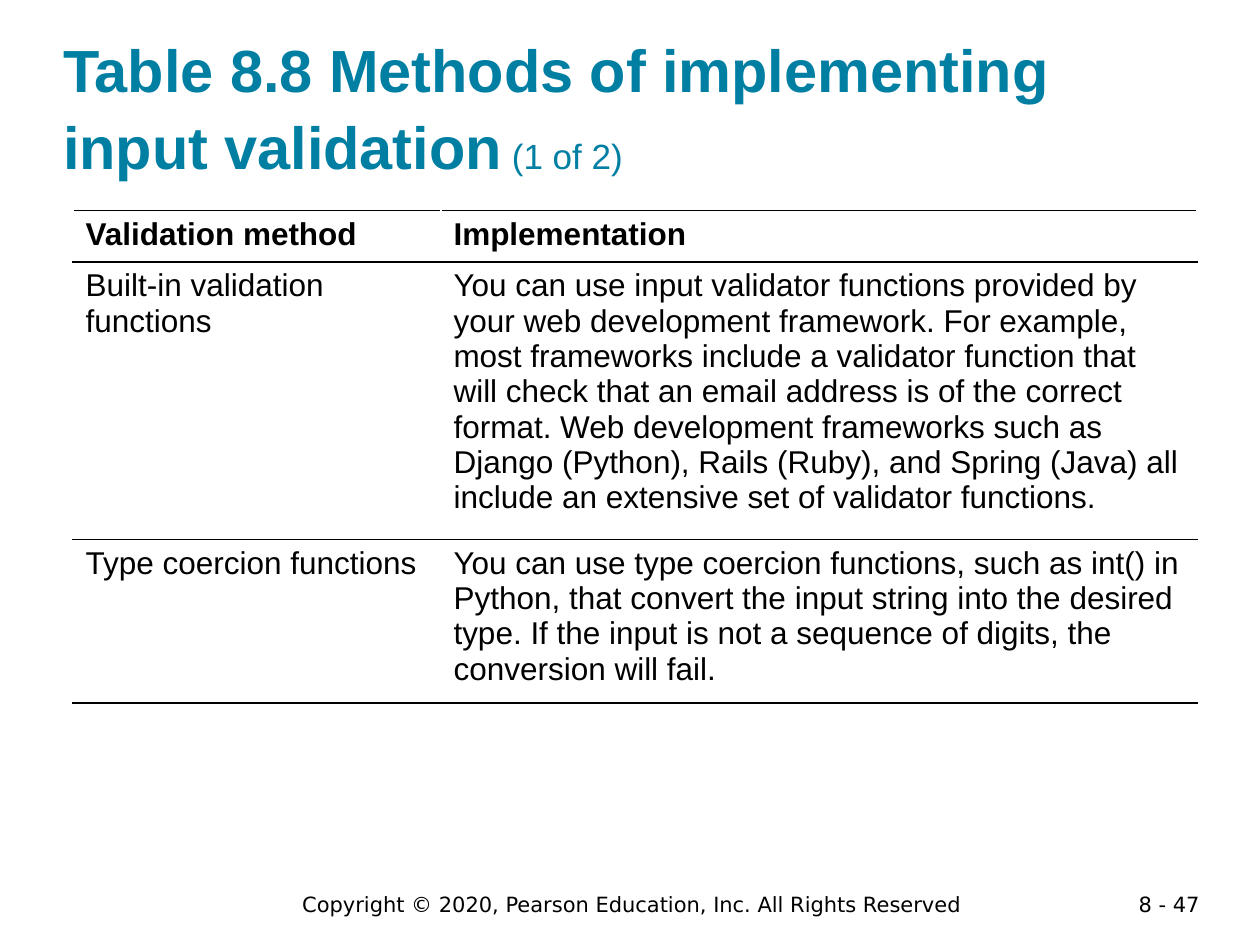
from typing import NamedTuple

from lxml import etree
from pptx import Presentation
from pptx.dml.color import RGBColor
from pptx.enum import text as t
from pptx.oxml import ns
from pptx.util import Inches, Pt

TEAL = RGBColor(0x00, 0x7F, 0xA3)
BLACK = RGBColor(0x00, 0x00, 0x00)
SANS = "Arial"
FOOT = "DejaVu Sans"


class Note(NamedTuple):
    words: str
    left: float
    width: float
    height: float
    align: t.PP_ALIGN


class Row(NamedTuple):
    method: list[str]
    usage: list[str]
    bold: bool = False


NOTES = [
    Note("8 - 47", 8.62, 1, 0.22, t.PP_ALIGN.RIGHT),
    Note("Copyright © 2020, Pearson Education, Inc. All Rights Reserved",
         1.64, 6.75, 0.3, t.PP_ALIGN.CENTER),
]

ROWS = [
    Row(["Validation method"], ["Implementation"], True),
    Row(["Built-in validation functions"],
        ["You can use input validator functions provided by your web "
         "development framework. For example, most frameworks include a "
         "validator function that will check that an email address is of the "
         "correct format. Web development frameworks such as Django (Python), "
         "Rails (Ruby), and Spring (Java) all include an extensive set of "
         "validator functions."]),
    Row(["Type coercion functions"],
        ["You can use type coercion functions, such as int() in",
         "Python, that convert the input string into the desired",
         "type. If the input is not a sequence of digits, the",
         "conversion will fail."]),
]


def add_run(para, words: str, size: float, color: RGBColor,
            face: str = SANS, bold: bool = False) -> None:
    run = para.add_run()
    run.text = words
    font = run.font
    font.name, font.size, font.bold = face, Pt(size), bold
    font.color.rgb = color


def add_title(slide) -> None:
    title = slide.shapes.title
    title.left, title.top = Inches(0.5), Inches(0.24)
    title.width, title.height = Inches(9), Inches(1.2)
    frame = title.text_frame
    frame.word_wrap = True
    frame.auto_size = t.MSO_AUTO_SIZE.NONE
    frame.vertical_anchor = t.MSO_ANCHOR.BOTTOM
    frame.margin_left = frame.margin_right = 0
    frame.margin_top = frame.margin_bottom = 0
    para = frame.paragraphs[0]
    para.alignment = t.PP_ALIGN.LEFT
    para.line_spacing = 1.08
    add_run(para, "Table 8.8 Methods of implementing input validation",
            34, TEAL, bold=True)
    add_run(para, " ", 20, TEAL, bold=True)
    add_run(para, "(1 of 2)", 20, TEAL)


def add_note(slide, note: Note) -> None:
    box = slide.shapes.add_textbox(Inches(note.left), Inches(7.03),
                                   Inches(note.width), Inches(note.height))
    box.text_frame.word_wrap = True
    para = box.text_frame.paragraphs[0]
    para.alignment = note.align
    add_run(para, note.words, 12, BLACK, FOOT)


def add_rules(cell) -> None:
    props = cell._tc.get_or_add_tcPr()
    for tag in ("a:lnT", "a:lnB"):
        line = etree.SubElement(props, ns.qn(tag), w=str(Pt(1)))
        fill = etree.SubElement(line, ns.qn("a:solidFill"))
        etree.SubElement(fill, ns.qn("a:srgbClr"), val=str(BLACK))


def fill_cell(cell, lines: list[str], bold: bool) -> None:
    add_rules(cell)
    cell.fill.background()
    frame = cell.text_frame
    for i, words in enumerate(lines):
        para = frame.add_paragraph() if i else frame.paragraphs[0]
        add_run(para, words, 18, BLACK, bold=bold)


def add_grid(slide) -> None:
    high = Inches(0.41)
    grid = slide.shapes.add_table(len(ROWS), 2, Inches(0.58), Inches(1.67),
                                  Inches(8.92), high * len(ROWS)).table
    grid.horz_banding = False
    for col, width in zip(grid.columns, (2.92, 6)):
        col.width = Inches(width)
    for i, row in enumerate(ROWS):
        grid.rows[i].height = high
        for j, lines in enumerate((row.method, row.usage)):
            fill_cell(grid.cell(i, j), lines, row.bold)


def main() -> None:
    deck = Presentation()
    deck.slide_width, deck.slide_height = Inches(10), Inches(7.5)
    slide = deck.slides.add_slide(deck.slide_layouts[5])
    for note in NOTES:
        add_note(slide, note)
    add_grid(slide)
    add_title(slide)
    deck.save("out.pptx")


if __name__ == "__main__":
    main()
